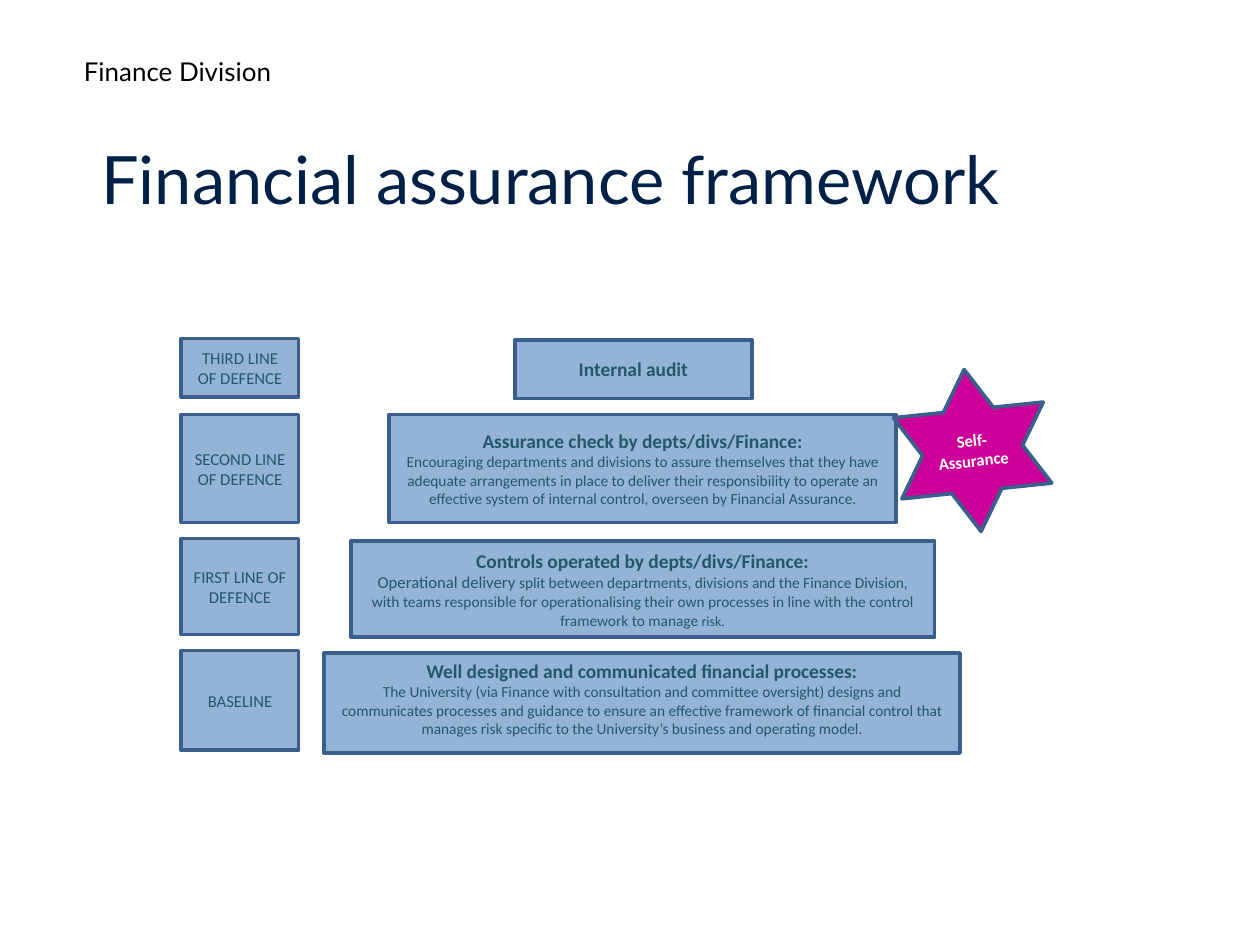
from pptx import Presentation
from pptx.dml.color import RGBColor
from pptx.enum.shapes import MSO_SHAPE
from pptx.enum.text import MSO_ANCHOR, MSO_AUTO_SIZE, PP_ALIGN
from pptx.util import Inches, Pt

RECTANGLE, STAR = MSO_SHAPE.RECTANGLE, MSO_SHAPE.STAR_6_POINT
LEFT, CENTER = PP_ALIGN.LEFT, PP_ALIGN.CENTER
MIDDLE, TOP = MSO_ANCHOR.MIDDLE, MSO_ANCHOR.TOP
NO_AUTOFIT = MSO_AUTO_SIZE.NONE

BLUE, OUTLINE, TEAL = "95B3D7", "3A5F8C", "215968"
MAGENTA, WHITE, NAVY, BLACK = "CC0099", "FFFFFF", "002147", "000000"
HEADING, LABEL, BODY, SMALL = 10.5, 9, 8.3, 7.5

HEADER = "Finance Division"
TITLE = "Financial assurance framework"
PANEL_PLACE = (0, 0.89, 9.45, 6.2)
LABEL_LEFT, LABEL_WIDTH = 1.36, 0.88
LEVELS = [
    {"label": "THIRD LINE OF DEFENCE", "label_top": 2.54, "height": 0.44,
     "box": (3.86, 2.55, 1.78), "heading": "Internal audit", "body": []},
    {"label": "SECOND LINE OF DEFENCE", "label_top": 3.11, "height": 0.81,
     "box": (2.92, 3.11, 3.8), "heading": "Assurance check by depts/divs/Finance:",
     "body": [("Encouraging departments and divisions to assure themselves that they have "
               "adequate arrangements in place to deliver their responsibility to operate an "
               "effective system of internal control, overseen by Financial Assurance.", BODY)]},
    {"label": "FIRST LINE OF DEFENCE", "label_top": 4.04, "height": 0.72,
     "box": (2.63, 4.06, 4.38), "heading": "Controls operated by depts/divs/Finance:",
     "body": [("Operational delivery ", LABEL),
              ("split between departments, divisions and the Finance Division, with teams "
               "responsible for operationalising their own processes in line with the control "
               "framework to manage ", BODY),
              ("risk.", SMALL)]},
    {"label": "BASELINE", "label_top": 4.88, "height": 0.75, "bottom_inset": 0.12,
     "box": (2.43, 4.9, 4.77),
     "heading": "Well designed and communicated financial processes:",
     "body": [("The University (via Finance with consultation and committee oversight) designs "
               "and communicates processes and guidance to ensure an effective framework of "
               "financial control that manages risk specific to the University’s business and "
               "operating model.", BODY)]},
]
STAR_TEXT = "Self-Assurance"
STAR_PLACE, STAR_ROTATION = (6.73, 2.77, 1.13, 1.22), 354


def color(value):
    return RGBColor.from_string(value)


def add_run(paragraph, text, size=LABEL, font="Calibri", fill=TEAL, bold=False, align=CENTER):
    paragraph.alignment = align
    run = paragraph.add_run()
    run.text = text
    run.font.size, run.font.name, run.font.bold = Pt(size), font, bold
    run.font.color.rgb = color(fill)


def set_frame(shape, anchor=MIDDLE, side=0.1, bottom=0.05):
    frame = shape.text_frame
    frame.word_wrap, frame.auto_size, frame.vertical_anchor = True, NO_AUTOFIT, anchor
    frame.margin_left = frame.margin_right = Inches(side)
    frame.margin_top, frame.margin_bottom = Inches(0.05), Inches(bottom)
    return frame


def add_filled_shape(slide, place, kind=RECTANGLE, fill=BLUE):
    shape = slide.shapes.add_shape(kind, *map(Inches, place))
    shape.shadow.inherit = False
    shape.fill.solid()
    shape.fill.fore_color.rgb = color(fill)
    return shape


def add_box(slide, place, kind=RECTANGLE, fill=BLUE, **margins):
    shape = add_filled_shape(slide, place, kind, fill)
    shape.line.color.rgb = color(OUTLINE)
    shape.line.width = Pt(2)
    return shape, set_frame(shape, **margins)


def add_level(slide, level):
    height = level["height"]
    label_place = (LABEL_LEFT, level["label_top"], LABEL_WIDTH, height)
    _, frame = add_box(slide, label_place, side=0.09)
    add_run(frame.paragraphs[0], level["label"])

    bottom = level.get("bottom_inset", 0.05)
    _, frame = add_box(slide, (*level["box"], height), side=0.12, bottom=bottom)
    add_run(frame.paragraphs[0], level["heading"], size=HEADING, bold=True)
    if level["body"]:
        paragraph = frame.add_paragraph()
        for text, size in level["body"]:
            add_run(paragraph, text, size=size)


def main():
    presentation = Presentation()
    presentation.slide_width, presentation.slide_height = Inches(9.45), Inches(7.09)
    slide = presentation.slides.add_slide(presentation.slide_layouts[5])
    title = slide.shapes.title

    header = slide.shapes.add_textbox(*map(Inches, (0.53, 0.37, 5.51, 0.34)))
    add_run(set_frame(header, anchor=TOP).paragraphs[0], HEADER,
            size=14, font="Lato", fill=BLACK, align=LEFT)

    panel = add_filled_shape(slide, PANEL_PLACE, fill=WHITE)
    panel.line.fill.background()
    for background in (header, panel):
        title.element.addprevious(background.element)

    title.left, title.top, title.width, title.height = map(Inches, (0.66, 0.96, 8.16, 0.75))
    add_run(set_frame(title).paragraphs[0], TITLE, size=36, font="Lato", fill=NAVY, align=LEFT)

    for level in LEVELS:
        add_level(slide, level)

    star, frame = add_box(slide, STAR_PLACE, kind=STAR, fill=MAGENTA, side=0.07)
    star.rotation = STAR_ROTATION
    add_run(frame.paragraphs[0], STAR_TEXT, fill=WHITE, bold=True)

    presentation.save("out.pptx")


if __name__ == "__main__":
    main()
